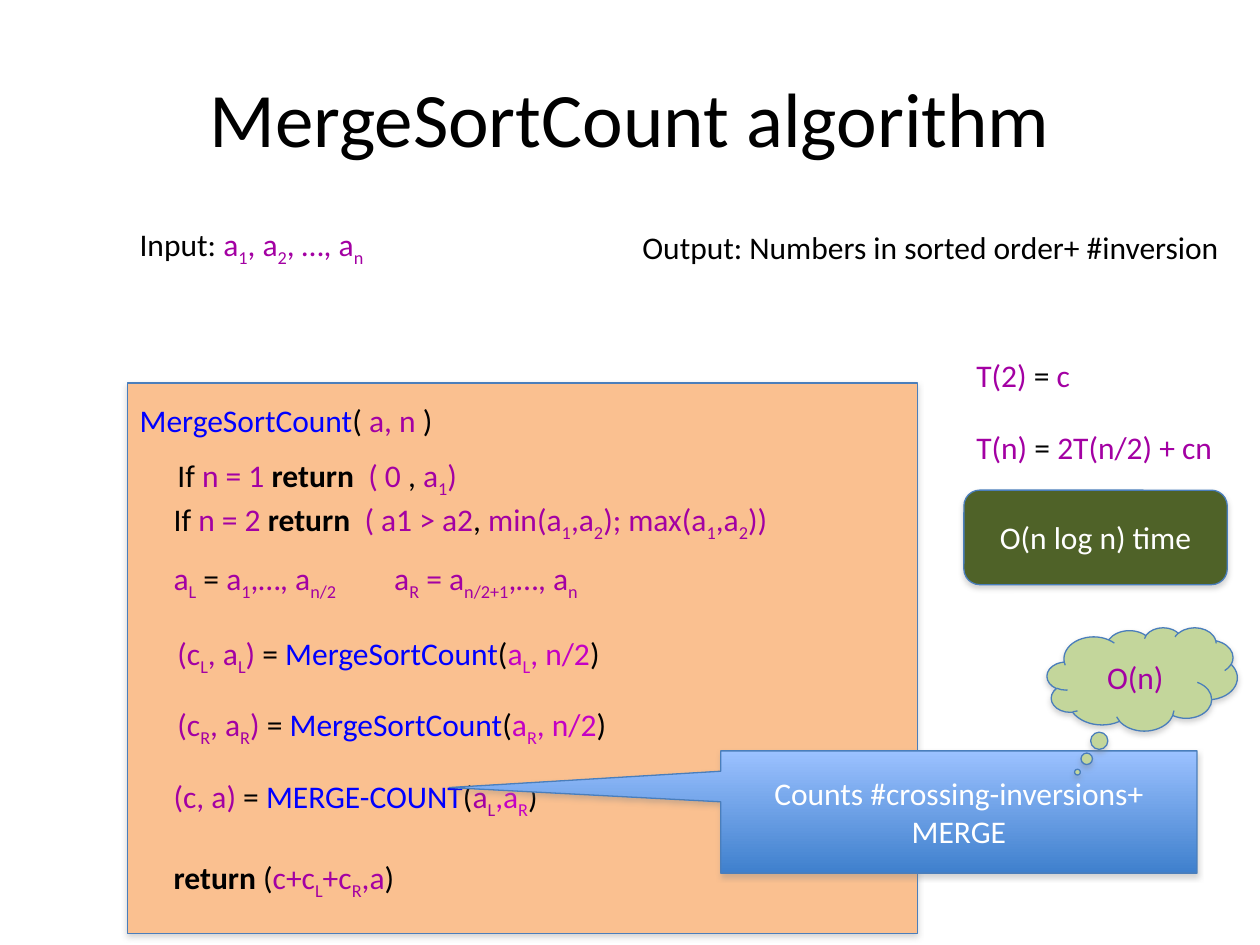
import pptx
import pptx.dml.color
import pptx.enum.shapes
import pptx.enum.text
import pptx.oxml
import pptx.oxml.ns
import pptx.util

RGB = pptx.dml.color.RGBColor
KIND = pptx.enum.shapes.MSO_SHAPE
BLACK = RGB(0x00, 0x00, 0x00)
WHITE = RGB(0xFF, 0xFF, 0xFF)
BLUE = RGB(0x00, 0x00, 0xFF)
PLUM = RGB(0xA3, 0x00, 0xA3)
PINK = RGB(0xC4, 0x00, 0xC4)
PEACH = RGB(0xFA, 0xC0, 0x90)
LIME = RGB(0xC3, 0xD6, 0x9B)
OLIVE = RGB(0x4F, 0x62, 0x28)
EDGE = RGB(0x4A, 0x7E, 0xBB)
SKY = RGB(0x9B, 0xC1, 0xFF)
DEEP = RGB(0x3F, 0x80, 0xCD)

# The slide is a grid of 100 columns by 75 rows.
CELL = pptx.util.Inches(0.1)
LEFT, CODE, CALL, SIDE = 10.1, 12.8, 13.1, 76.5
STEP = 5.7
LINE = 4
SHADE = (
    '<a:effectLst %s><a:outerShdw blurRad="40000" dist="23000" dir="5400000" '
    'rotWithShape="0"><a:srgbClr val="808080"><a:alpha val="35000"/></a:srgbClr>'
    '</a:outerShdw></a:effectLst>' % pptx.oxml.ns.nsdecls("a")
)


def grid(*cells):
    return [round(n * CELL) for n in cells]


def write(para, runs, size=18):
    """Add (colour, text) runs; every second piece between bars is a subscript."""
    for color, text, *bold in runs:
        for i, piece in enumerate(text.split("|")):
            if not piece:
                continue
            run = para.add_run()
            run.text = piece
            run.font.name = "Calibri"
            run.font.size = pptx.util.Pt(size)
            run.font.bold = bool(bold)
            run.font.color.rgb = color
            if i % 2:
                run.font._element.set("baseline", "-25000") if hasattr(
                    run.font, "_element") else run._r.get_or_add_rPr().set(
                    "baseline", "-25000")


def center(shape, runs, size=18):
    frame = shape.text_frame
    frame.word_wrap = True
    frame.vertical_anchor = pptx.enum.text.MSO_ANCHOR.MIDDLE
    frame.paragraphs[0].alignment = pptx.enum.text.PP_ALIGN.CENTER
    write(frame.paragraphs[0], runs, size)


def label(slide, col, row, wide, *runs):
    frame = slide.shapes.add_textbox(*grid(col, row, wide, LINE)).text_frame
    frame.word_wrap = False
    frame.auto_size = pptx.enum.text.MSO_AUTO_SIZE.SHAPE_TO_FIT_TEXT
    write(frame.paragraphs[0], runs)


def block(slide, kind, place, fill, runs=(), bends=()):
    """Add a shaded shape; a pair of fill colours runs from top to bottom."""
    shape = slide.shapes.add_shape(kind, *grid(*place))
    for i, bend in enumerate(bends):
        shape.adjustments[i] = bend
    if isinstance(fill, list):
        shape.fill.gradient()
        shape.fill.gradient_angle = 270
        for stop, color in zip(shape.fill.gradient_stops, fill):
            stop.color.rgb = color
    else:
        shape.fill.solid()
        shape.fill.fore_color.rgb = fill
    shape.line.color.rgb = EDGE
    shape.line.width = pptx.util.Pt(0.75)
    shape._element.spPr.append(pptx.oxml.parse_xml(SHADE))
    center(shape, runs)


def header(slide):
    title = slide.shapes.add_textbox(*grid(5, 3, 90, 12.5))
    center(title, [(BLACK, "MergeSortCount algorithm")], 44)
    label(slide, LEFT, 17.4, 20.7, (BLACK, "Input: "), (PLUM, "a|1|, a|2|, …, a|n"))
    label(slide, 50, 17.6, 48.2,
          (BLACK, "Output: Numbers in sorted order+ #inversion"))


def code(slide):
    label(slide, LEFT, 31.3, 25.5, (BLUE, "MergeSortCount"), (BLACK, "( "),
          (PLUM, "a, n "), (BLACK, ")"))
    label(slide, CALL, 35.7, 24.5, (BLACK, "If "), (PLUM, "n = 1 "),
          (BLACK, "return  ", True), (PLUM, "( 0 "), (BLACK, ", "), (PLUM, "a|1|)"))
    label(slide, CODE, 39.2, 50.9, (BLACK, "If "), (PLUM, "n = 2 "),
          (BLACK, "return  ", True), (PLUM, "( a1 > a2"), (BLACK, ", "),
          (PLUM, "min(a|1|,a|2|); max(a|1|,a|2|))"))
    label(slide, CODE, 43.9, 15.6, (PLUM, "a|L"), (BLACK, " = "),
          (PLUM, "a|1|,…, a|n/2"))
    label(slide, 30.3, 43.9, 17.5, (PLUM, "a|R| = a|n/2+1|,…, a|n"))
    top = 49.8
    for i, (half, wide) in enumerate([("L", 36.1), ("R", 36.7)]):
        label(slide, CALL, top + i * STEP, wide,
              (PLUM, f"(c|{half}|, a|{half}|) "), (BLACK, "= "),
              (BLUE, "MergeSortCount"), (BLACK, "("),
              (PINK, f"a|{half}|, n/2"), (BLACK, ")"))
    label(slide, CODE, top + 2 * STEP, 31.4, (PLUM, "(c, a) "), (BLACK, "= "),
          (BLUE, "MERGE-COUNT"), (BLACK, "("), (PLUM, "a|L"), (PINK, ",a|R"),
          (BLACK, ")"))
    label(slide, CODE, 67.6, 19.9, (BLACK, "return", True), (BLACK, " ("),
          (PLUM, "c+c|L|+c|R|,a"), (BLACK, ")"))


def cost(slide):
    top = 27.8
    label(slide, SIDE, top, 9.5, (PLUM, "T(2) "), (BLACK, "= "), (PLUM, "c"))
    label(slide, SIDE, top + STEP, 20.9, (PLUM, "T(n) "), (BLACK, "= "),
          (PLUM, "2T(n/2) + cn"))
    block(slide, KIND.ROUNDED_RECTANGLE, (SIDE, 38.9, 20.9, 7.5), OLIVE,
          [(WHITE, "O(n log n) time")])


def notes(slide):
    block(slide, KIND.RECTANGULAR_CALLOUT, (57.2, 59.6, 37.8, 9.7), [SKY, DEEP],
          [(WHITE, "Counts #crossing-inversions+ MERGE")], (-1.07, -0.2))
    block(slide, KIND.CLOUD_CALLOUT, (83.1, 49.8, 15.1, 8.2), LIME,
          [(PLUM, "O(n)")], (-0.34, 0.9))


def main():
    deck = pptx.Presentation()
    deck.slide_width, deck.slide_height = grid(100, 75)
    slide = deck.slides.add_slide(deck.slide_layouts[6])
    block(slide, KIND.RECTANGLE, (LEFT, 30.4, 62.7, 43.7), PEACH)
    header(slide)
    code(slide)
    notes(slide)
    cost(slide)
    deck.save("out.pptx")


if __name__ == "__main__":
    main()
